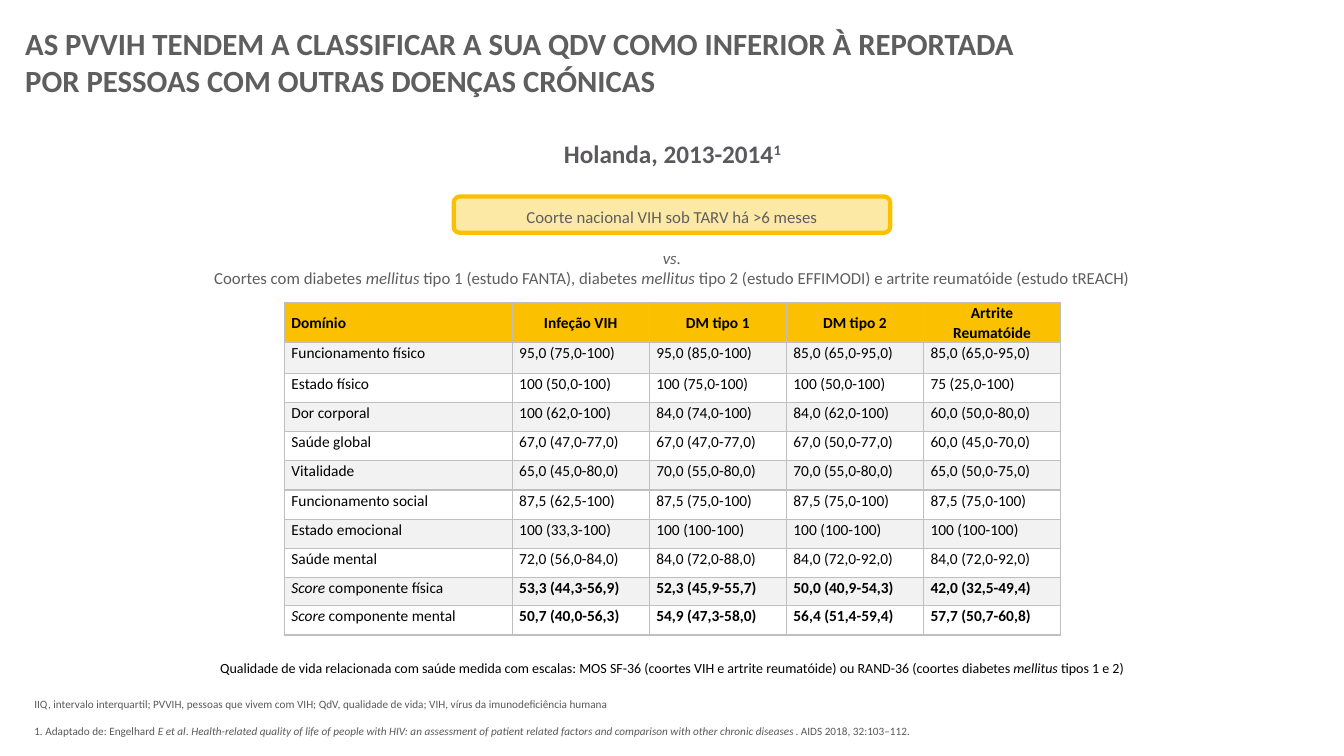
"""Build a slide comparing quality of life in HIV with other chronic diseases."""
from dataclasses import dataclass

from lxml.etree import SubElement
from pptx import Presentation
from pptx.dml.color import RGBColor
from pptx.enum.shapes import MSO_SHAPE
from pptx.enum.text import MSO_ANCHOR, PP_ALIGN
from pptx.oxml import parse_xml
from pptx.oxml.ns import nsdecls, qn
from pptx.util import Pt

SCALE = 9144


@dataclass(frozen=True)
class Theme:
    font: str = "Calibri"
    gold: str = "FBC100"
    band: str = "F2F2F2"
    rule: str = "BFBFBF"
    black: str = "000000"
    grey: str = "5E5E5E"
    place: str = "5B595D"
    note: str = "595959"
    title: int = 22
    head: int = 18
    body: int = 12
    cell: int = 11
    small: int = 10
    tiny: int = 8


LOOK = Theme()
ROWS = [
    ["Domínio", "Infeção VIH", "DM tipo 1", "DM tipo 2", "Artrite Reumatóide"],
    ["Funcionamento físico", "95,0 (75,0-100)", "95,0 (85,0-100)",
     "85,0 (65,0-95,0)", "85,0 (65,0-95,0)"],
    ["Estado físico", "100 (50,0-100)", "100 (75,0-100)",
     "100 (50,0-100)", "75 (25,0-100)"],
    ["Dor corporal", "100 (62,0-100)", "84,0 (74,0-100)",
     "84,0 (62,0-100)", "60,0 (50,0-80,0)"],
    ["Saúde global", "67,0 (47,0-77,0)", "67,0 (47,0-77,0)",
     "67,0 (50,0-77,0)", "60,0 (45,0-70,0)"],
    ["Vitalidade", "65,0 (45,0-80,0)", "70,0 (55,0-80,0)",
     "70,0 (55,0-80,0)", "65,0 (50,0-75,0)"],
    ["Funcionamento social", "87,5 (62,5-100)", "87,5 (75,0-100)",
     "87,5 (75,0-100)", "87,5 (75,0-100)"],
    ["Estado emocional", "100 (33,3-100)", "100 (100-100)",
     "100 (100-100)", "100 (100-100)"],
    ["Saúde mental", "72,0 (56,0-84,0)", "84,0 (72,0-88,0)",
     "84,0 (72,0-92,0)", "84,0 (72,0-92,0)"],
    ["*Score* componente física", "53,3 (44,3-56,9)", "52,3 (45,9-55,7)",
     "50,0 (40,9-54,3)", "42,0 (32,5-49,4)"],
    ["*Score* componente mental", "50,7 (40,0-56,3)", "54,9 (47,3-58,0)",
     "56,4 (51,4-59,4)", "57,7 (50,7-60,8)"],
]


def px(*nums):
    """Turn pixel lengths into EMU."""
    return [num * SCALE for num in nums]


def style(item, **vals):
    """Set each named value on the item."""
    for key, val in vals.items():
        setattr(item, key, val)


def add_run(para, text, size, tint, bold, slant, raised=False):
    """Add one styled run to a paragraph."""
    run = para.add_run()
    run.text = text
    style(run.font, name=LOOK.font, size=Pt(size), bold=bold, italic=slant)
    run.font.color.rgb = RGBColor.from_string(tint)
    if raised:
        run.font._element.set("baseline", "30000")


def write(para, text, size, tint, bold=False, **form):
    """Fill a paragraph; stars mark italics and a caret marks superscript."""
    style(para, **form)
    for spot, part in enumerate(text.split("*")):
        base, _, power = part.partition("^")
        for words, raised in ((base, False), (power, True)):
            if words:
                add_run(para, words, size, tint, bold, spot % 2 == 1, raised)


def add_text(slide, at, lines, size, tint, bold=False, gap=0,
             pad=(3, 3), align=PP_ALIGN.LEFT, **form):
    """Add a text box, with a gap before its second line."""
    frame = slide.shapes.add_textbox(*px(*at)).text_frame
    side, top = px(*pad)
    vals = dict(word_wrap=True, margin_left=side, margin_right=side,
                margin_top=top, margin_bottom=top)
    style(frame, **{**vals, **form})
    for row, line in enumerate(lines):
        para = frame.add_paragraph() if row else frame.paragraphs[0]
        write(para, line, size, tint, bold, alignment=align,
              space_before=Pt(gap if row == 1 else 0))


def add_frame(slide, at):
    """Add the rounded gold highlight."""
    box = slide.shapes.add_shape(MSO_SHAPE.ROUNDED_RECTANGLE, *px(*at))
    box.shadow.inherit = False
    box.fill.solid()
    gold = RGBColor.from_string(LOOK.gold)
    box.fill.fore_color.rgb = box.line.color.rgb = gold
    box.line.width = Pt(3)
    tone = box._element.spPr.find(qn("a:solidFill"))[0]
    SubElement(tone, qn("a:alpha"), val="35000")


def edge(cell):
    """Draw thin rules on all four sides of a cell."""
    props = cell._tc.get_or_add_tcPr()
    for spot, side in enumerate(("lnL", "lnR", "lnT", "lnB")):
        props.insert(spot, parse_xml(
            f'<a:{side} {nsdecls("a")} w="12700"><a:solidFill>'
            f'<a:srgbClr val="{LOOK.rule}"/></a:solidFill></a:{side}>'))


def add_grid(slide, at, rows):
    """Add the table of scores by domain and cohort."""
    grid = slide.shapes.add_table(len(rows), len(rows[0]), *px(*at)).table
    style(grid, first_row=False, horz_banding=False)
    for col, wide in zip(grid.columns, px(226, *[136] * 4)):
        col.width = wide
    for row, tall in zip(grid.rows, px(38, 31, *[29] * 7, 28, 29)):
        row.height = tall
    for r, words in enumerate(rows):
        for c, text in enumerate(words):
            cell = grid.cell(r, c)
            head, score = r == 0, r > 8 and c > 0
            style(cell, margin_left=px(7)[0], margin_right=px(7)[0],
                  margin_top=0, margin_bottom=0,
                  vertical_anchor=MSO_ANCHOR.MIDDLE if head else MSO_ANCHOR.TOP)
            if head or r % 2:
                cell.fill.solid()
                tint = LOOK.gold if head else LOOK.band
                cell.fill.fore_color.rgb = RGBColor.from_string(tint)
            else:
                cell.fill.background()
            edge(cell)
            write(cell.text_frame.paragraphs[0], text, LOOK.cell, LOOK.black,
                  head or score, line_spacing=1.07, space_after=Pt(8),
                  alignment=PP_ALIGN.CENTER if head and c else PP_ALIGN.LEFT)


def main():
    """Build and save the slide."""
    deck = Presentation()
    style(deck, slide_width=px(1333)[0], slide_height=px(750)[0])
    slide = deck.slides.add_slide(deck.slide_layouts[6])
    mid = PP_ALIGN.CENTER
    add_frame(slide, (450, 195, 433, 36))
    add_text(slide, (34, 691, 1280, 41), [
        "IIQ, intervalo interquartil; PVVIH, pessoas que vivem com VIH; "
        "QdV, qualidade de vida; VIH, vírus da imunodeficiência humana",
        "1. Adaptado de: Engelhard *E et al*. *Health-related quality of life of "
        "people with HIV: an assessment of patient related factors and comparison "
        "with other chronic diseases*. AIDS 2018, 32:103–112."],
        LOOK.tiny, LOOK.note, gap=10, pad=(0, 0), vertical_anchor=MSO_ANCHOR.BOTTOM)
    add_text(slide, (173, 160, 987, 129), [
        "Coorte nacional VIH sob TARV há >6 meses", "*vs.*",
        "Coortes com diabetes *mellitus *tipo 1 (estudo FANTA), diabetes *mellitus* "
        "tipo 2 (estudo EFFIMODI) e artrite reumatóide (estudo tREACH)"],
        LOOK.body, LOOK.grey, gap=15, align=mid, vertical_anchor=MSO_ANCHOR.BOTTOM)
    add_text(slide, (140, 649, 1053, 27), [
        "Qualidade de vida relacionada com saúde medida com escalas: MOS SF-36 "
        "(coortes VIH e artrite reumatóide) ou RAND-36 (coortes diabetes "
        "*mellitus *tipos 1 e 2)"], LOOK.small, LOOK.black, pad=(10, 5), align=mid)
    add_grid(slide, (282, 300, 770, 329), ROWS)
    add_text(slide, (535, 132, 264, 40), ["Holanda, 2013-2014^1"],
             LOOK.head, LOOK.place, True, pad=(10, 5), align=mid)
    add_text(slide, (22, 22, 1004, 80), [
        "AS PVVIH TENDEM A CLASSIFICAR A SUA QDV COMO INFERIOR À REPORTADA",
        "POR PESSOAS COM OUTRAS DOENÇAS CRÓNICAS"],
        LOOK.title, LOOK.grey, True, word_wrap=False)
    deck.save("out.pptx")


if __name__ == "__main__":
    main()
